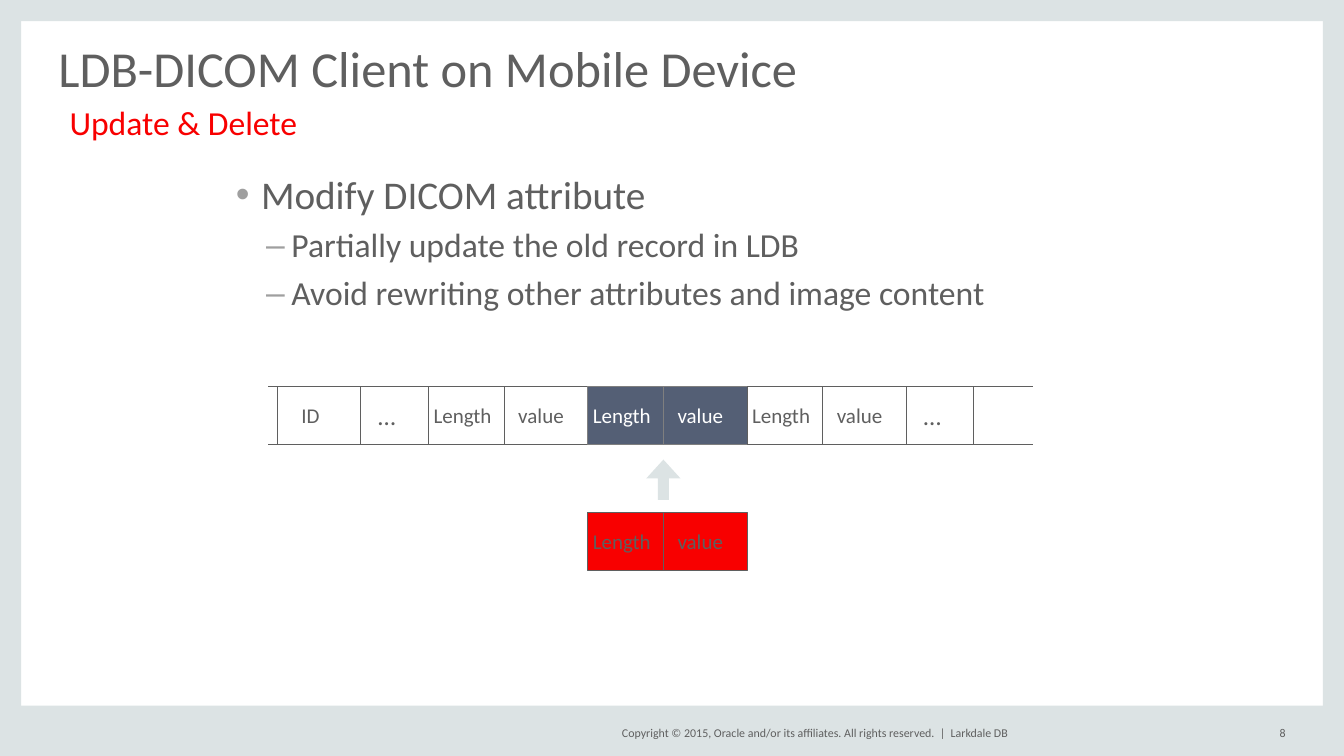
from lxml import etree
from pptx import Presentation
from pptx.dml.color import RGBColor
from pptx.enum.shapes import MSO_CONNECTOR, MSO_SHAPE
from pptx.enum.text import MSO_ANCHOR, PP_ALIGN
from pptx.oxml.ns import qn
from pptx.util import Inches, Pt

FRAME = RGBColor(0xDC, 0xE3, 0xE4)
GREY = RGBColor(0x5F, 0x5F, 0x5F)
MID_GREY = RGBColor(0x7F, 0x7F, 0x7F)
SLATE = RGBColor(0x54, 0x5F, 0x75)
RED = RGBColor(0xF8, 0x00, 0x00)
WHITE = RGBColor(0xFF, 0xFF, 0xFF)

prs = Presentation()
prs.slide_width, prs.slide_height = Inches(13.33), Inches(7.5)
s = prs.slides.add_slide(prs.slide_layouts[6])


def add_box(kind, x, y, w, h, fill=None, line=None):
    """Add a preset shape; without a fill or line colour that part is clear."""
    sp = s.shapes.add_shape(kind, Inches(x), Inches(y), Inches(w), Inches(h))
    sp.shadow.inherit = False
    if fill is None:
        sp.fill.background()
    else:
        sp.fill.solid()
        sp.fill.fore_color.rgb = fill
    if line is None:
        sp.line.fill.background()
    else:
        sp.line.color.rgb = line
        sp.line.width = Pt(0.75)
    return sp


def write(sp, paragraphs, anchor=MSO_ANCHOR.MIDDLE, inset=0):
    """Fill a shape with (text, size, colour, paragraph formats) entries."""
    tf = sp.text_frame
    tf.word_wrap = True
    tf.vertical_anchor = anchor
    tf.margin_left = Inches(inset)
    tf.margin_right = tf.margin_top = tf.margin_bottom = 0
    for i, (text, size, color, formats) in enumerate(paragraphs):
        p = tf.paragraphs[0] if i == 0 else tf.add_paragraph()
        p.alignment = PP_ALIGN.LEFT
        for name, value in formats.items():
            setattr(p, name, value)
        r = p.add_run()
        r.text = text
        r.font.name, r.font.size = "Calibri", Pt(size)
        r.font.color.rgb = color
    return tf


# Frame
for x, y, w, h in [(0, 0, 0.21, 7.5), (13.12, 0, 0.21, 7.5),
                   (0, 7, 13.33, 0.5), (0, 0, 13.33, 0.21)]:
    add_box(MSO_SHAPE.RECTANGLE, x, y, w, h, FRAME)

# Footer
for text, x, w, align in [
    ("Copyright © 2015, Oracle and/or its affiliates. All rights reserved.  |",
     5.88, 3.5, PP_ALIGN.RIGHT),
    ("Larkdale DB", 9.43, 2.8, PP_ALIGN.LEFT),
    ("8", 12.33, 0.42, PP_ALIGN.RIGHT),
]:
    tb = s.shapes.add_textbox(Inches(x), Inches(7.17), Inches(w), Inches(0.2))
    write(tb, [(text, 8.5, GREY, {"alignment": align})])

# Title and subtitle
title = s.shapes.add_textbox(Inches(0.58), Inches(0.44), Inches(12.17), Inches(0.97))
tf = write(title, [
    ("LDB-DICOM Client on Mobile Device", 36, GREY, {"line_spacing": 0.8}),
    ("Update & Delete", 24, RED, {"line_spacing": Pt(32)}),
], MSO_ANCHOR.BOTTOM)
tf.paragraphs[1]._p.get_or_add_pPr().set("marL", str(Inches(0.11)))

# Bullets
sub = {"level": 1, "line_spacing": 0.9, "space_before": Pt(8)}
body = s.shapes.add_textbox(Inches(2.34), Inches(1.74), Inches(8.24), Inches(2.52))
tf = write(body, [
    ("Modify DICOM attribute", 28, GREY, {"line_spacing": 0.9}),
    ("Partially update the old record in LDB", 24, GREY, sub),
    ("Avoid rewriting other attributes and image content", 24, GREY, sub),
], MSO_ANCHOR.TOP)
for p in tf.paragraphs:
    margin, char = (0.55, "–") if p.level else (0.25, "•")
    pPr = p._p.get_or_add_pPr()
    pPr.set("marL", str(Inches(margin)))
    pPr.set("indent", str(Inches(-0.25)))
    color = etree.SubElement(pPr, qn("a:buClr"))
    etree.SubElement(color, qn("a:srgbClr"), val="9F9F9F")
    etree.SubElement(pPr, qn("a:buFont"), typeface="Arial")
    etree.SubElement(pPr, qn("a:buChar"), char=char)

# Record edges
ROW_Y, ROW_H = 3.83, 0.58
for y in (ROW_Y, ROW_Y + ROW_H):
    edge = s.shapes.add_connector(MSO_CONNECTOR.STRAIGHT, Inches(2.66), Inches(y),
                                  Inches(10.25), Inches(y))
    edge.line.color.rgb = GREY
    edge.line.width = Pt(0.75)
    etree.SubElement(edge._element.spPr, qn("a:effectLst"))

# Record fields: label -> width, text size, left inset
FIELDS = {"ID": (0.83, 15, 0.24), "…": (0.67, 18, 0.17),
          "Length": (0.75, 15, 0.05), "value": (0.83, 15, 0.14)}
PLAIN = (None, GREY, GREY)
OLD = (SLATE, MID_GREY, WHITE)
NEW = (RED, GREY, GREY)
record = [("ID", PLAIN), ("…", PLAIN), ("Length", PLAIN), ("value", PLAIN),
          ("Length", OLD), ("value", OLD), ("Length", PLAIN), ("value", PLAIN),
          ("…", PLAIN)]
update = [("Length", NEW), ("value", NEW)]
for x, y, cells in [(2.75, ROW_Y, record), (5.83, 5.08, update)]:
    for label, (fill, line, color) in cells:
        w, size, inset = FIELDS[label]
        sp = add_box(MSO_SHAPE.RECTANGLE, x, y, w, ROW_H, fill, line)
        write(sp, [(label, size, color, {})], inset=inset)
        x += w

arrow = add_box(MSO_SHAPE.UP_ARROW, 6.41, 4.56, 0.34, 0.4, FRAME)
arrow.adjustments[0], arrow.adjustments[1] = 0.32, 0.55

prs.save("out.pptx")
